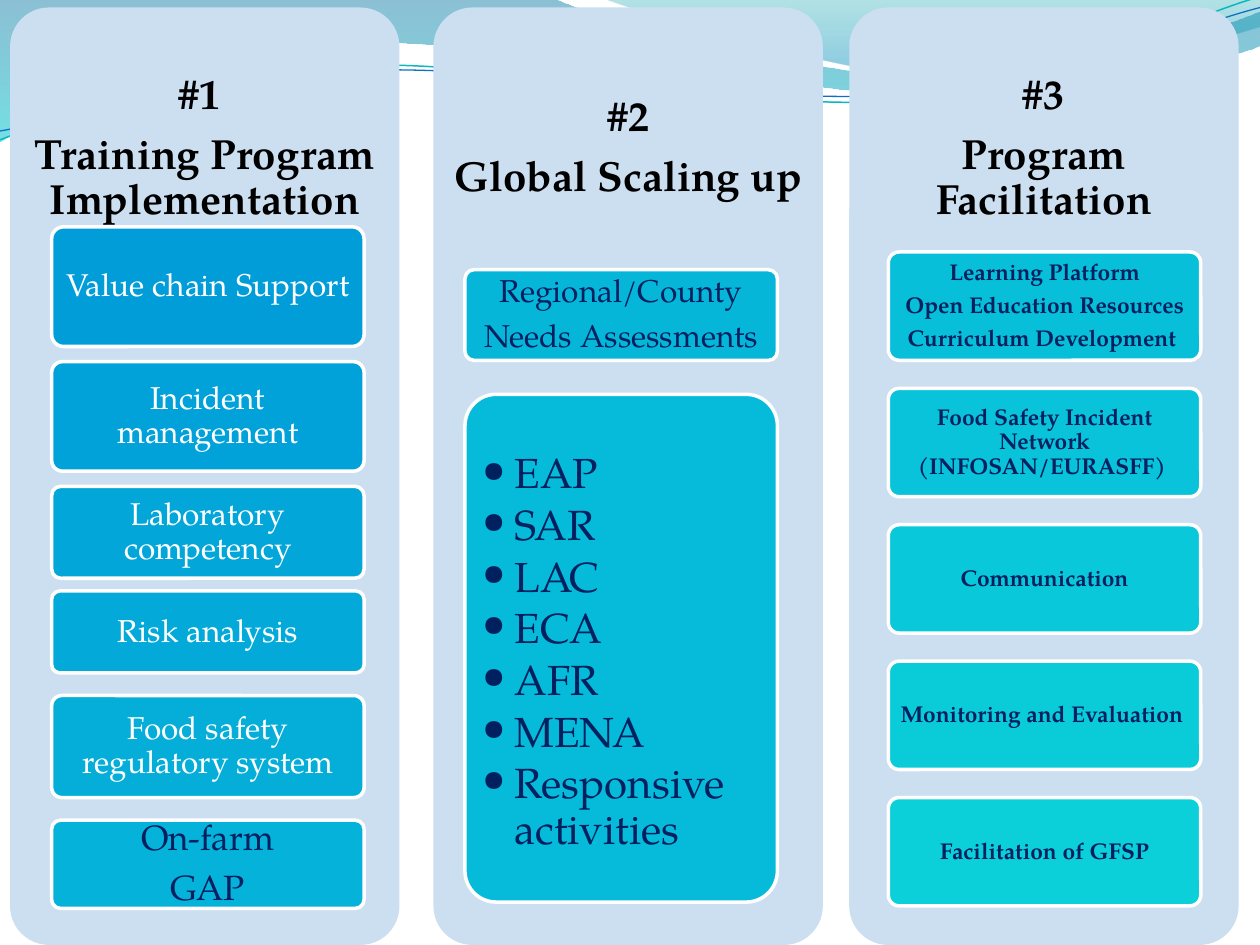
from dataclasses import dataclass

from lxml.etree import SubElement
from pptx import Presentation
from pptx.dml.color import RGBColor as RGB
from pptx.enum.shapes import MSO_SHAPE as Shape
from pptx.enum.text import MSO_ANCHOR as Anchor, PP_ALIGN as Align
from pptx.oxml.ns import qn
from pptx.util import Inches, Pt


@dataclass(frozen=True)
class Theme:
    font: str = "TeX Gyre Pagella"
    panel: str = "CCDFF1"
    white: str = "FFFFFF"
    black: str = "000000"
    navy: str = "002060"
    first: tuple = (0, 157, 217)
    last: tuple = (11, 208, 217)
    head: int = 24
    large: int = 20
    body: int = 18
    small: int = 13


@dataclass(frozen=True)
class Card:
    top: float
    high: float
    lines: tuple
    size: int = Theme.body
    color: str = Theme.navy
    bold: bool = False
    bullets: bool = False


THEME = Theme()
STEPS = 12  # colour steps from the first card to the last

# A wave starts at a point; each part is a line (one point) or a curve (three).
WAVES = (
    ((0, 0), (
        ((4.4, -0.01),),
        ((4.76, 0.17), (6.64, 0.63), (7.58, 0.63)),
        ((8.53, 0.63), (9.58, 0.26), (10, 0.09)),
        ((10.01, 0.36),),
        ((9.83, 0.44), (8.7, 0.76), (7.46, 0.75)),
        ((6.22, 0.75), (3.82, 0.28), (2.57, 0.34)),
        ((1.29, 0.36), (0.46, 0.83), (-0.01, 1.13)),
        ((0, 0),),
    ), ((0, "0074A1", 45), (1, "00C6CF", 55))),
    ((4.79, -0.01), (
        ((5.09, 0.11), (6.82, 0.62), (7.69, 0.65)),
        ((8.56, 0.69), (9.61, 0.32), (10, 0.21)),
        ((10, 0),),
        ((4.79, -0.01),),
    ), ((0, "00A1A9", 30), (0.8, "008BBF", 45))),
)
STRANDS = (
    ((0, 1.11), (
        ((0.48, 0.93), (1.58, 0.57), (2.77, 0.52)),
        ((3.95, 0.47), (5.93, 0.89), (7.13, 0.8)),
        ((8.33, 0.71), (9.38, 0.15), (9.98, -0.02)),
    ), "0AB8BF", 0.85),
    ((0, 1.04), (
        ((0.47, 0.96), (1.64, 0.61), (2.83, 0.56)),
        ((4.03, 0.51), (5.97, 0.84), (7.17, 0.75)),
        ((8.36, 0.67), (9.41, 0.21), (10, 0.06)),
    ), "0F6FC6", 0.75),
)

TRAINING = (
    Card(1.8, 0.95, ("Value chain Support",), color=THEME.white),
    Card(2.87, 0.87, ("Incident management",), color=THEME.white),
    Card(3.86, 0.73, ("Laboratory competency",), color=THEME.white),
    Card(4.69, 0.65, ("Risk analysis",), color=THEME.white),
    Card(5.52, 0.81, ("Food safety regulatory system",), color=THEME.white),
    Card(6.51, 0.7, ("On-farm", "GAP"), THEME.large),
)
SCALING = (
    Card(2.14, 0.72, ("Regional/County", "Needs Assessments")),
    Card(3.13, 4.03, ("EAP", "SAR", "LAC", "ECA", "AFR", "MENA",
                      "Responsive activities"), THEME.head, bullets=True),
)
TOPICS = (
    ("Learning Platform", "Open Education Resources", "Curriculum Development "),
    ("Food Safety Incident Network (INFOSAN/EURASFF) ",),
    ("Communication",),
    ("Monitoring and Evaluation ",),
    ("Facilitation of GFSP",),
)
SUPPORT = tuple(Card(2 + i * 4.33 / 4, 0.86, lines, THEME.small, bold=True)
                for i, lines in enumerate(TOPICS))

# Panel left, card left, number of the first card, title, cards
COLUMNS = (
    (0.08, 0.41, 0, ("#1 ", "Training Program Implementation"), TRAINING),
    (3.44, 3.69, 6, ("#2", "Global Scaling up"), SCALING),
    (6.74, 7.05, 8, ("#3", "Program Facilitation"), SUPPORT),
)


def outline(slide, start, parts, close):
    """Build a freeform, then turn each run of three points into one curve."""
    spots = [start] + [spot for part in parts for spot in part]
    spots = [(Inches(x), Inches(y)) for x, y in spots]
    pen = slide.shapes.build_freeform(*spots[0])
    pen.add_line_segments(spots[1:], close=close)
    shape = pen.convert_to_shape()
    shape.shadow.inherit = False
    legs = iter(list(shape._element.iter(qn("a:lnTo"))))
    for part in parts:
        group = [next(legs) for _ in part]
        if len(group) == 3:
            group[0].tag = qn("a:cubicBezTo")
            for leg in group[1:]:
                group[0].append(leg[0])
                leg.getparent().remove(leg)
    return shape


def add_waves(slide):
    for start, parts, stops in WAVES:
        wave = outline(slide, start, parts, True)
        wave.line.fill.background()
        wave.fill.gradient()
        wave.fill.gradient_angle = 270
        for stop, (place, color, _) in zip(wave.fill.gradient_stops, stops):
            stop.position = place
            stop.color.rgb = RGB.from_string(color)
        tags = list(wave._element.iter(qn("a:srgbClr")))
        for tag, (_, _, alpha) in zip(tags, stops):
            SubElement(tag, qn("a:alpha")).set("val", str(alpha * 1000))
    for start, parts, color, width in STRANDS:
        strand = outline(slide, start, parts, False)
        strand.fill.background()
        strand.line.color.rgb = RGB.from_string(color)
        strand.line.width = Pt(width)


def add_bullet(para):
    props = para._p.get_or_add_pPr()
    props.set("marL", str(Inches(0.25)))
    props.set("indent", str(-Inches(0.25)))
    SubElement(props, qn("a:buFont")).set("typeface", THEME.font)
    SubElement(props, qn("a:buChar")).set("char", "•")


def write(frame, lines, size, color, bold=False, bullets=False, inset=(0.05, 0.04)):
    frame.word_wrap = True
    frame.vertical_anchor = Anchor.TOP if bullets else Anchor.MIDDLE
    frame.margin_left = frame.margin_right = Inches(inset[0])
    frame.margin_top = frame.margin_bottom = Inches(inset[1])
    for i, line in enumerate(lines):
        para = frame.add_paragraph() if i else frame.paragraphs[0]
        para.alignment = Align.LEFT if bullets else Align.CENTER
        para.line_spacing = 0.9
        para.space_after = Pt(size * (0.15 if bullets else 0.35))
        if bullets:
            add_bullet(para)
        run = para.add_run()
        run.text = line
        run.font.name = THEME.font
        run.font.size = Pt(size)
        run.font.bold = bold
        run.font.color.rgb = RGB.from_string(color)


def add_round(slide, box, fill):
    shape = slide.shapes.add_shape(Shape.ROUNDED_RECTANGLE, *map(Inches, box))
    shape.adjustments[0] = 0.1
    shape.shadow.inherit = False
    shape.fill.solid()
    shape.fill.fore_color.rgb = fill
    shape.line.fill.background()
    return shape


def add_card(slide, box, card, rank):
    tint = RGB(*(round(a + (b - a) * rank / STEPS)
                 for a, b in zip(THEME.first, THEME.last)))
    shape = add_round(slide, box, tint)
    shape.line.color.rgb = RGB.from_string(THEME.white)
    shape.line.width = Pt(2)
    inset = (0.07, 0.39) if card.bullets else (0.04, 0.03) if card.bold else (0.05, 0.04)
    write(shape.text_frame, card.lines, card.size, card.color, card.bold,
          card.bullets, inset)


def add_column(slide, box, inner, rank, title, cards):
    left, top, wide, high = box
    add_round(slide, box, RGB.from_string(THEME.panel))
    head = slide.shapes.add_textbox(*map(Inches, (left, top, wide, high * 0.3)))
    write(head.text_frame, title, THEME.head, THEME.black, True, inset=(0.1, 0.1))
    for i, card in enumerate(cards):
        add_card(slide, (inner, card.top, 2.48, card.high), card, rank + i)


def main():
    deck = Presentation()
    deck.slide_width, deck.slide_height = Inches(10), Inches(7.5)
    slide = deck.slides.add_slide(deck.slide_layouts[6])
    add_waves(slide)
    for left, *rest in COLUMNS:
        add_column(slide, (left, 0.06, 3.09, 7.44), *rest)
    deck.save("out.pptx")


if __name__ == "__main__":
    main()
